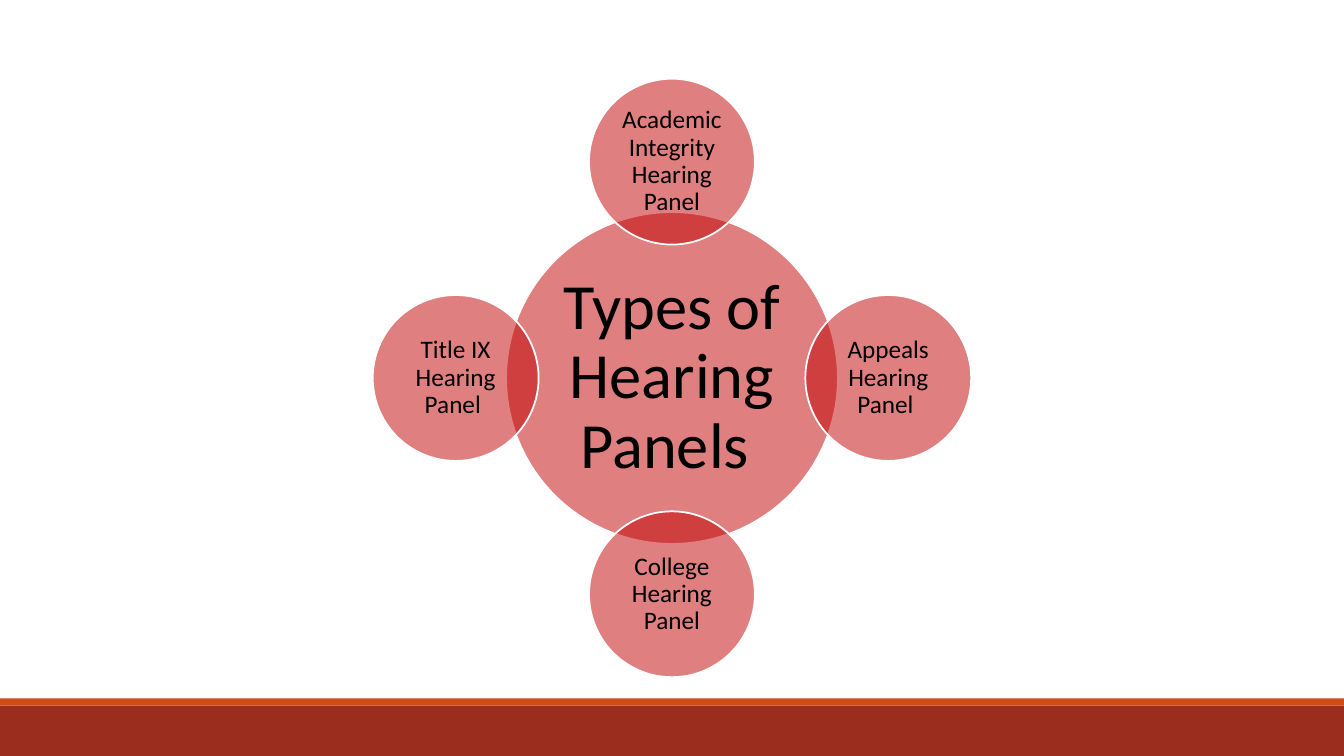
"""Build the hearing panel types slide: a hub circle ringed by four panels."""
from dataclasses import dataclass

from lxml import etree
from pptx import Presentation
from pptx.dml.color import RGBColor
from pptx.enum.shapes import MSO_SHAPE
from pptx.enum.text import MSO_ANCHOR, PP_ALIGN
from pptx.oxml.ns import qn
from pptx.shapes.autoshape import Shape
from pptx.slide import Slide
from pptx.util import Emu, Pt

RECTANGLE = MSO_SHAPE.RECTANGLE
OVAL = MSO_SHAPE.OVAL
MIDDLE = MSO_ANCHOR.MIDDLE
CENTER = PP_ALIGN.CENTER

EMU_PER_PX = 9525
PAGE_WIDTH, PAGE_HEIGHT = 1280, 720
CENTER_X, CENTER_Y = 640, 360
HUB_RADIUS = 158
PANEL_RADIUS = 79
ORBIT = 206

BLACK = RGBColor(0x00, 0x00, 0x00)
WHITE = RGBColor(0xFF, 0xFF, 0xFF)
CIRCLE_RED = RGBColor(0xC0, 0x00, 0x00)
FOOTER_RED = RGBColor(0x9B, 0x2D, 0x1F)
STRIPE_ORANGE = RGBColor(0xD3, 0x48, 0x17)


@dataclass(frozen=True)
class Bar:
    """A full-width band at the foot of the page."""
    top: int
    height: int
    color: RGBColor


@dataclass(frozen=True)
class Panel:
    """A small circle and its direction from the hub."""
    label: str
    step_x: int
    step_y: int


BARS = (Bar(672, 48, FOOTER_RED), Bar(665, 7, STRIPE_ORANGE))
PANELS = (
    Panel("Academic Integrity Hearing Panel", 0, -1),
    Panel("Appeals Hearing Panel ", 1, 0),
    Panel("College Hearing Panel", 0, 1),
    Panel("Title IX Hearing Panel ", -1, 0),
)


def px(length: int) -> Emu:
    """Convert pixels to EMU."""
    return Emu(length * EMU_PER_PX)


def add_filled(page: Slide, kind: MSO_SHAPE, left: int, top: int,
               width: int, height: int, color: RGBColor) -> Shape:
    """Add a flat shape with a solid fill and no outline."""
    shape = page.shapes.add_shape(kind, px(left), px(top), px(width), px(height))
    shape.shadow.inherit = False
    shape.fill.solid()
    shape.fill.fore_color.rgb = color
    shape.line.fill.background()
    return shape


def set_opacity(shape: Shape, percent: int) -> None:
    """Set the opacity of a solid fill."""
    color = shape.fill._xPr.find(qn("a:solidFill")).find(qn("a:srgbClr"))
    etree.SubElement(color, qn("a:alpha"), val=str(percent * 1000))


def write_text(shape: Shape, text: str, *, size: int, inset: int) -> None:
    """Write centred black text inside a shape."""
    frame = shape.text_frame
    frame.word_wrap = True
    frame.vertical_anchor = MIDDLE
    frame.margin_left = frame.margin_right = px(inset)
    frame.margin_top = frame.margin_bottom = px(inset)
    para = frame.paragraphs[0]
    para.alignment = CENTER
    para.line_spacing = 0.9
    span = para.add_run()
    span.text = text
    span.font.name = "Calibri"
    span.font.size = Pt(size)
    span.font.color.rgb = BLACK


def add_circle(page: Slide, center_x: int, center_y: int, radius: int,
               text: str, *, size: int, inset: int) -> None:
    """Add a translucent labelled circle around a centre point."""
    circle = add_filled(page, OVAL, center_x - radius, center_y - radius,
                        2 * radius, 2 * radius, CIRCLE_RED)
    set_opacity(circle, 50)
    circle.line.color.rgb = WHITE
    circle.line.width = Pt(1.25)
    write_text(circle, text, size=size, inset=inset)


def main() -> None:
    """Build and save the deck."""
    deck = Presentation()
    deck.slide_width, deck.slide_height = px(PAGE_WIDTH), px(PAGE_HEIGHT)
    page = deck.slides.add_slide(deck.slide_layouts[6])
    for bar in BARS:
        add_filled(page, RECTANGLE, 0, bar.top, PAGE_WIDTH, bar.height, bar.color)
    add_circle(page, CENTER_X, CENTER_Y, HUB_RADIUS,
               "Types of Hearing Panels ", size=46, inset=6)
    for panel in PANELS:
        add_circle(page, CENTER_X + panel.step_x * ORBIT,
                   CENTER_Y + panel.step_y * ORBIT, PANEL_RADIUS,
                   panel.label, size=18, inset=3)
    deck.save("out.pptx")


if __name__ == "__main__":
    main()
